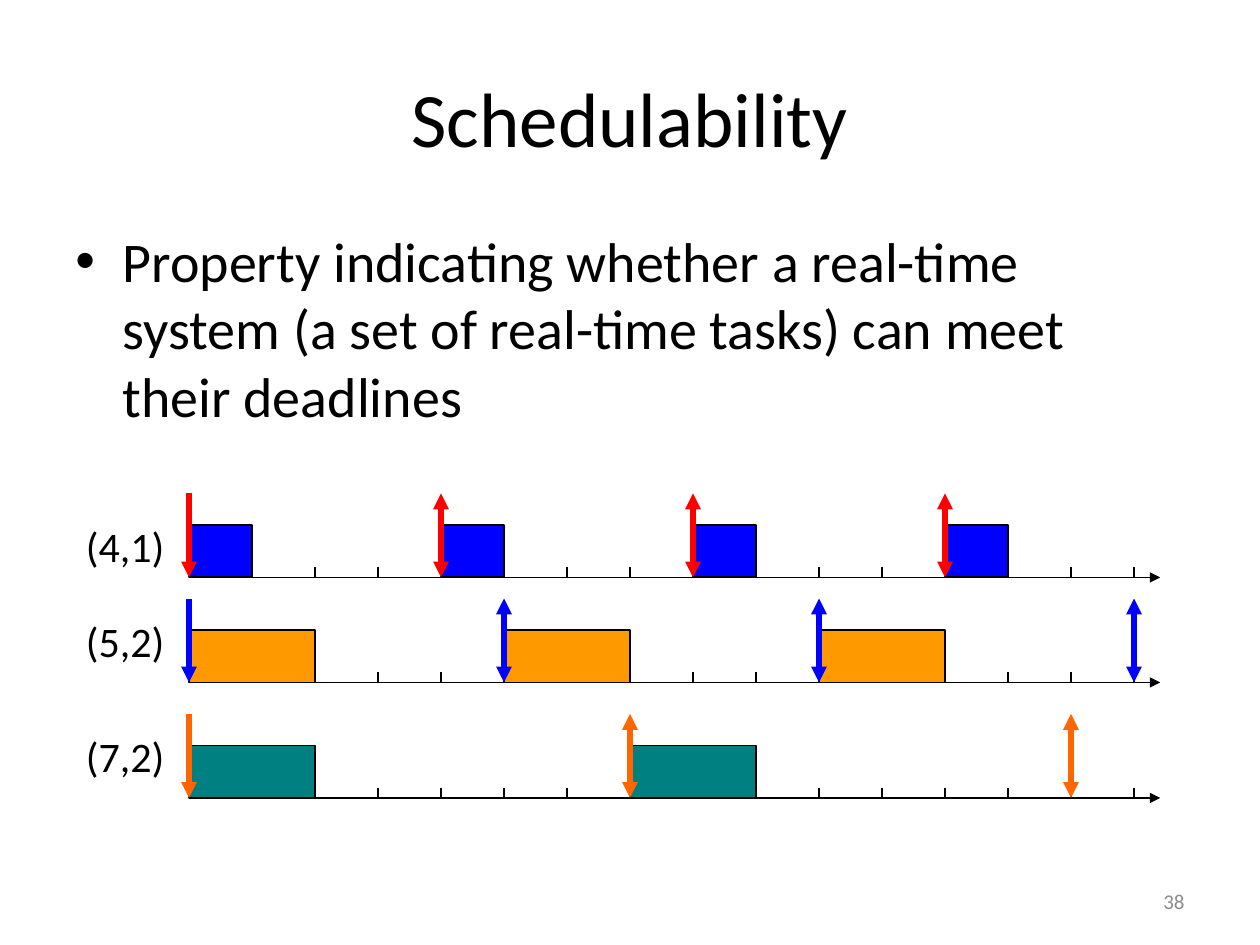
from dataclasses import dataclass

from lxml import etree
from pptx import Presentation
from pptx.dml.color import RGBColor
from pptx.enum.shapes import MSO_CONNECTOR, MSO_SHAPE
from pptx.enum.text import MSO_ANCHOR, PP_ALIGN
from pptx.oxml.ns import qn
from pptx.util import Emu, Pt

STRAIGHT = MSO_CONNECTOR.STRAIGHT
RECTANGLE = MSO_SHAPE.RECTANGLE
TOP, MIDDLE = MSO_ANCHOR.TOP, MSO_ANCHOR.MIDDLE
LEFT, CENTER, RIGHT = PP_ALIGN.LEFT, PP_ALIGN.CENTER, PP_ALIGN.RIGHT

EMU_PER_PX = 7620  # 120 px to the inch


def px(length):
    return Emu(length * EMU_PER_PX)


@dataclass(frozen=True)
class Theme:
    font: str = "Calibri"
    ink: str = "000000"
    muted: str = "8C8C8C"
    red: str = "FF0000"
    blue: str = "0000FF"
    amber: str = "FF9900"
    orange: str = "FF6600"
    teal: str = "008080"
    title_size: int = 44
    body_size: int = 32
    label_size: int = 24
    number_size: int = 12
    axis_width: float = 0.75
    block_width: float = 1
    release_width: float = 3


class SlideBuilder:
    def __init__(self, page, theme):
        self.page = page
        self.theme = theme

    def text(self, words, left, top, width, height, size,
             color=None, align=LEFT, anchor=TOP, wrap=True):
        box = self.page.shapes.add_textbox(px(left), px(top), px(width), px(height))
        frame = box.text_frame
        frame.word_wrap = wrap
        frame.vertical_anchor = anchor
        para = frame.paragraphs[0]
        para.alignment = align
        span = para.add_run()
        span.text = words
        span.font.name = self.theme.font
        span.font.size = Pt(size)
        span.font.color.rgb = RGBColor.from_string(color or self.theme.ink)
        return para

    def bullet(self, words, left, top, width, height, size):
        para = self.text(words, left, top, width, height, size)
        props = para._p.get_or_add_pPr()
        indent = px(45)
        props.set("marL", str(indent))
        props.set("indent", str(-indent))
        spacing = etree.SubElement(props, qn("a:spcBef"))
        etree.SubElement(spacing, qn("a:spcPct"), val="20000")
        etree.SubElement(props, qn("a:buFont"), typeface="Arial")
        etree.SubElement(props, qn("a:buChar"), char="•")

    def block(self, left, top, width, height, color):
        shape = self.page.shapes.add_shape(
            RECTANGLE, px(left), px(top), px(width), px(height))
        shape.shadow.inherit = False
        shape.fill.solid()
        shape.fill.fore_color.rgb = RGBColor.from_string(color)
        shape.line.color.rgb = RGBColor.from_string(self.theme.ink)
        shape.line.width = Pt(self.theme.block_width)

    def line(self, x1, y1, x2, y2, color, width, arrows=()):
        connector = self.page.shapes.add_connector(
            STRAIGHT, px(x1), px(y1), px(x2), px(y2))
        connector.line.color.rgb = RGBColor.from_string(color)
        connector.line.width = Pt(width)
        outline = connector.line._get_or_add_ln()
        for end in arrows:
            etree.SubElement(outline, qn(f"a:{end}"), type="triangle")
        etree.SubElement(connector._element.spPr, qn("a:effectLst"))

    def timeline(self, period, cost, baseline, label_top, block_color, release_color):
        """Draw one periodic task: ticks, jobs, releases, label and axis."""
        start, unit, last = 180, 60, 15
        ink, thin = self.theme.ink, self.theme.axis_width

        # Axis and ticks
        for step in range(last + 1):
            x = start + step * unit
            self.line(x, baseline - 10, x, baseline, ink, thin)
        self.line(start, baseline, 1085, baseline, ink, thin)
        self.line(1075, baseline, 1105, baseline, ink, thin, ["tailEnd"])

        # Jobs that finish on the axis, and every release
        for release in range(0, last + 1, period):
            x = start + release * unit
            if release + cost <= last:
                self.block(x, baseline - 50, cost * unit, 50, block_color)
            arrows = ["headEnd", "tailEnd"] if release else ["tailEnd"]
            self.line(x, baseline - 80, x, baseline, release_color,
                      self.theme.release_width, arrows)

        self.text(f"({period},{cost})", 70, label_top, 101, 60,
                  self.theme.label_size, wrap=False)


def main():
    theme = Theme()
    deck = Presentation()
    deck.slide_width, deck.slide_height = px(1200), px(900)
    page = deck.slides.add_slide(deck.slide_layouts[6])
    builder = SlideBuilder(page, theme)

    # Slide number, title and definition
    builder.text("38", 860, 834, 280, 48, theme.number_size,
                 theme.muted, RIGHT, MIDDLE)
    builder.text("Schedulability", 60, 36, 1080, 150, theme.title_size,
                 align=CENTER, anchor=MIDDLE)
    builder.bullet("Property indicating whether a real-time system (a set of "
                   "real-time tasks) can meet their deadlines",
                   60, 210, 1080, 594, theme.body_size)

    # Task timelines: period, cost, baseline, label top, colours
    tasks = [
        (4, 1, 550, 490, theme.blue, theme.red),
        (5, 2, 650, 580, theme.amber, theme.blue),
        (7, 2, 760, 690, theme.teal, theme.orange),
    ]
    for task in tasks:
        builder.timeline(*task)

    deck.save("out.pptx")


if __name__ == "__main__":
    main()
